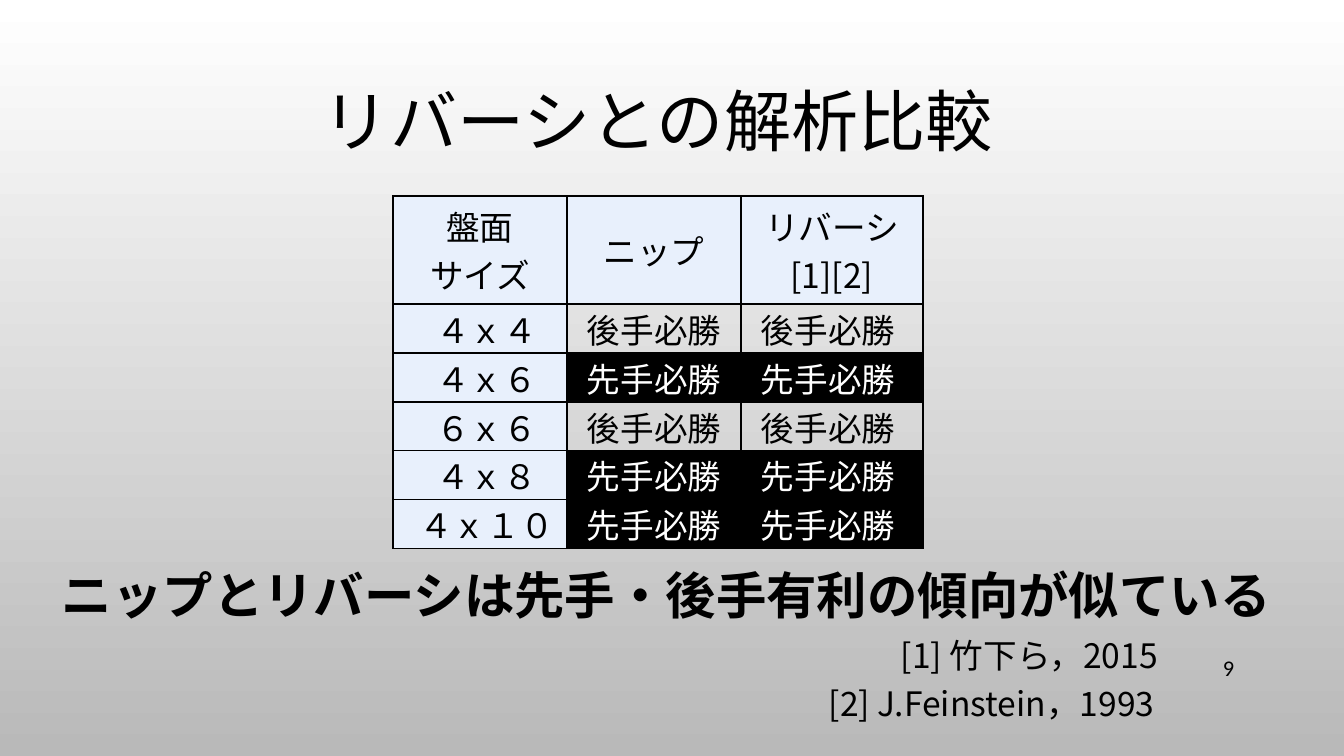
from lxml.etree import SubElement
from pptx import Presentation
from pptx.dml.color import RGBColor
from pptx.enum.text import MSO_ANCHOR, PP_ALIGN
from pptx.oxml import parse_xml
from pptx.oxml.ns import nsdecls, qn
from pptx.util import Pt

TITLE = "リバーシとの解析比較"
HEADER = ["盤面\nサイズ", "ニップ", "リバーシ[1][2]"]
SECOND, FIRST = "後手必勝", "先手必勝"
RESULTS = [
    ("４ｘ４", SECOND, SECOND),
    ("４ｘ６", FIRST, FIRST),
    ("６ｘ６", SECOND, SECOND),
    ("４ｘ８", FIRST, FIRST),
    ("４ｘ１０", FIRST, FIRST),
]
CONCLUSION = "ニップとリバーシは先手・後手有利の傾向が似ている"
REFERENCES = [
    ("[1] 竹下ら，2015", (891, 630, 306, 50)),
    ("[2] J.Feinstein，1993", (819, 678, 386, 50)),
]
PAGE = "9"

THEME = {
    "font": "Noto Sans CJK JP", "number_font": "Calibri",
    "black": "000000", "white": "FFFFFF", "label": "E8F0FC",
    "background": ("FFFFFF", "B9B9B9"),
    "title": 48, "conclusion": 36, "body": 24, "number": 16, "border": 1,
}
EMU_PER_PX = 914400 / 100.8
COLUMNS = [174, 174, 182]
HEADER_HEIGHT, ROW_HEIGHT = 108, 49
INSET, INDENT = 7, 13


def px(n):
    return round(n * EMU_PER_PX)


def write(tf, text, size=THEME["body"], font=THEME["font"], color=THEME["black"],
          bold=False, align=PP_ALIGN.LEFT, indent=0, spacing=None):
    for i, line in enumerate(text.split("\n")):
        p = tf.add_paragraph() if i else tf.paragraphs[0]
        p.alignment = align
        if spacing:
            p.line_spacing = spacing
        if indent:
            pPr = p._p.get_or_add_pPr()
            pPr.set("marL", "0")
            pPr.set("indent", str(px(indent)))
        r = p.add_run()
        r.text = line
        r.font.size = Pt(size)
        r.font.bold = bold
        r.font.color.rgb = RGBColor.from_string(color)
        r.font.name = font
        SubElement(r._r.get_or_add_rPr(), qn("a:ea")).set("typeface", font)


def add_text(s, text, box, anchor=MSO_ANCHOR.TOP, **fmt):
    tf = s.shapes.add_textbox(*map(px, box)).text_frame
    tf.word_wrap = True
    tf.vertical_anchor = anchor
    write(tf, text, **fmt)


def add_borders(cell):
    tcPr = cell._tc.get_or_add_tcPr()
    for i, side in enumerate("LRTB"):
        tcPr.insert(i, parse_xml(
            f'<a:ln{side} {nsdecls("a")} w="{Pt(THEME["border"])}"><a:solidFill>'
            f'<a:srgbClr val="{THEME["black"]}"/></a:solidFill></a:ln{side}>'))


def fill_cell(cell, text, is_header, is_label):
    cell.vertical_anchor = MSO_ANCHOR.MIDDLE
    fill = THEME["label"] if is_header or is_label else None
    if text == FIRST:
        fill = THEME["black"]
    if fill:
        cell.fill.solid()
        cell.fill.fore_color.rgb = RGBColor.from_string(fill)
    else:
        cell.fill.background()
    if not is_header:
        cell.margin_left = cell.margin_right = px(INSET)
        cell.margin_top = cell.margin_bottom = 0
    write(cell.text_frame, text,
          color=THEME["white"] if text == FIRST else THEME["black"],
          align=PP_ALIGN.CENTER if is_header or is_label else PP_ALIGN.LEFT,
          indent=0 if is_header else INDENT)
    add_borders(cell)


def add_results(s, left, top):
    rows = [HEADER, *RESULTS]
    heights = [HEADER_HEIGHT] + [ROW_HEIGHT] * len(RESULTS)
    table = s.shapes.add_table(len(rows), len(COLUMNS), px(left), px(top),
                               px(sum(COLUMNS)), px(sum(heights))).table
    table.first_row = table.horz_banding = False
    for column, width in zip(table.columns, COLUMNS):
        column.width = px(width)
    for i, (row, height) in enumerate(zip(rows, heights)):
        table.rows[i].height = px(height)
        for j, text in enumerate(row):
            fill_cell(table.cell(i, j), text, i == 0, j == 0)


def main():
    prs = Presentation()
    prs.slide_width, prs.slide_height = px(1344), px(756)
    s = prs.slides.add_slide(prs.slide_layouts[6])
    fill = s.background.fill
    fill.gradient()
    fill.gradient_angle = 270
    for stop, color in zip(fill.gradient_stops, THEME["background"]):
        stop.color.rgb = RGBColor.from_string(color)

    add_text(s, TITLE, (87, 37, 1142, 175), anchor=MSO_ANCHOR.MIDDLE,
             size=THEME["title"], align=PP_ALIGN.CENTER, spacing=0.9)
    add_results(s, 393, 196)
    add_text(s, CONCLUSION, (52, 559, 1250, 72),
             size=THEME["conclusion"], bold=True)
    for text, box in REFERENCES:
        add_text(s, text, box)
    add_text(s, PAGE, (1159, 648, 85, 40), anchor=MSO_ANCHOR.MIDDLE,
             size=THEME["number"], font=THEME["number_font"], align=PP_ALIGN.RIGHT)
    prs.save("out.pptx")


if __name__ == "__main__":
    main()
